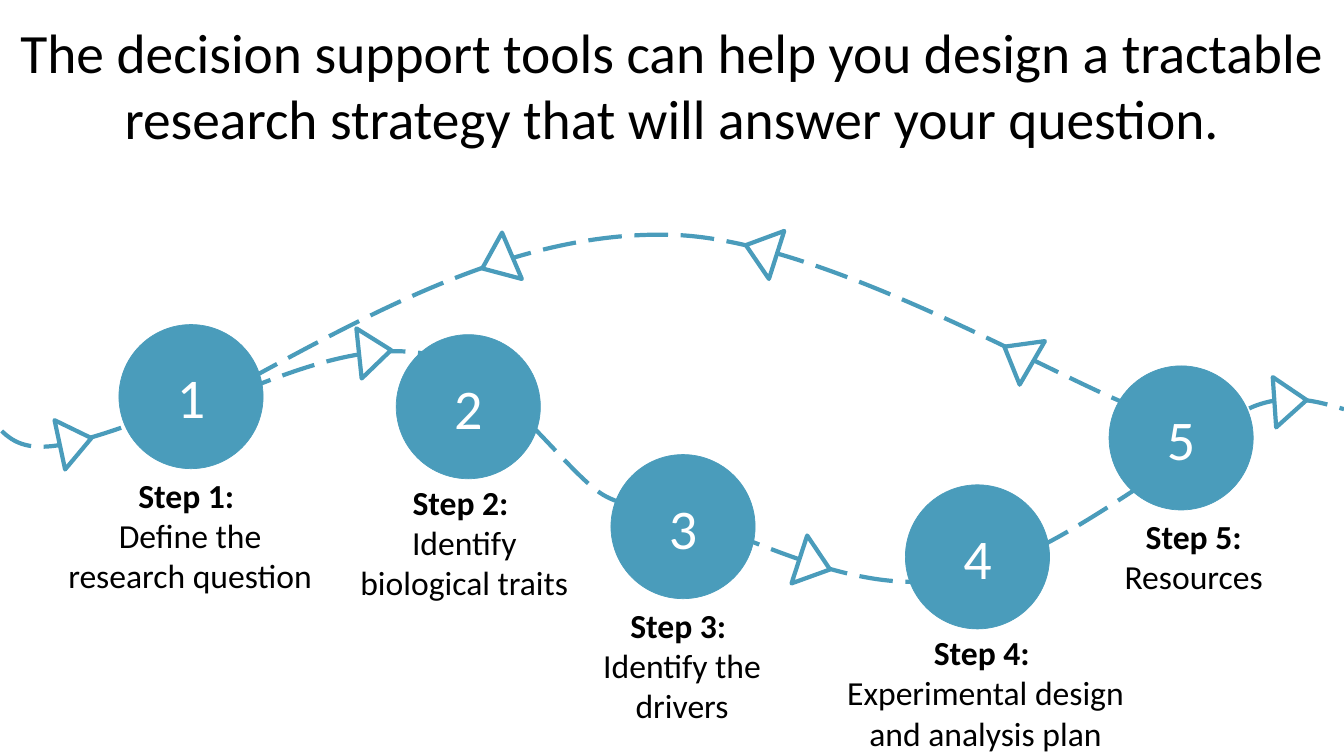
"""Build the five-step decision support journey slide."""
from dataclasses import dataclass

from lxml import etree
from pptx import Presentation
from pptx.dml.color import RGBColor
from pptx.enum.dml import MSO_LINE
from pptx.enum.shapes import MSO_SHAPE
from pptx.enum.text import MSO_ANCHOR, MSO_AUTO_SIZE, PP_ALIGN
from pptx.oxml.ns import qn
from pptx.util import Inches, Pt

ELLIPSE, TRIANGLE = MSO_SHAPE.OVAL, MSO_SHAPE.ISOSCELES_TRIANGLE
LONG_DASH = MSO_LINE.LONG_DASH
CENTER = PP_ALIGN.CENTER
TOP, MIDDLE = MSO_ANCHOR.TOP, MSO_ANCHOR.MIDDLE
GROW, FIXED = MSO_AUTO_SIZE.SHAPE_TO_FIT_TEXT, MSO_AUTO_SIZE.NONE

TEAL, BLACK, WHITE = "4A9CBB", "000000", "FFFFFF"
CIRCLE_SIZE = 1.43
ARROW_WIDTH, ARROW_HEIGHT = 0.5, 0.32
TITLE = ("The decision support tools can help you design a tractable "
         "research strategy that will answer your question.")


@dataclass(frozen=True)
class Step:
    number: int
    circle: tuple[float, float]
    label_box: tuple[float, float, float, float]
    lines: tuple[str, ...]
    heading_inline: bool = False


@dataclass(frozen=True)
class Arrow:
    left: float
    top: float
    rotation: float


STEPS = [
    Step(1, (1.18, 3.22), (0.51, 4.66, 2.75, 1.31), ("Define the research question",)),
    Step(2, (3.93, 3.32), (3.28, 4.73, 2.65, 1.31), ("Identify", "biological traits")),
    Step(3, (6.06, 4.51), (5.46, 5.95, 2.61, 1.31), ("Identify the drivers",)),
    Step(4, (8.98, 4.81), (8.16, 6.22, 3.23, 1.31),
         ("Experimental design", "and analysis plan")),
    Step(5, (11, 3.63), (10.91, 5.07, 1.86, 0.91), ("Resources",), True),
]

ARROWS = [
    Arrow(3.47, 3.33, 84), Arrow(0.5, 4.22, 77.9), Arrow(7.83, 5.44, 108.1),
    Arrow(12.55, 3.82, 86.1), Arrow(4.68, 2.44, 246.9), Arrow(7.3, 2.32, 287.7),
    Arrow(9.85, 3.36, 300.1),
]

ROUTES = [
    [(11.42, 4.03), (11.77, 4.19), (12.11, 4.35), (11.31, 4.06),
     (10.52, 3.78), (8.15, 2.36), (6.65, 2.33),
     (5.14, 2.29), (3.72, 3.08), (2.29, 3.86)],
    [(1.95, 4.07), (2.77, 3.72), (3.59, 3.37), (4.27, 3.52),
     (4.95, 3.66), (5.65, 4.75), (6.02, 4.93),
     (6.4, 5.12), (6.46, 4.87), (6.52, 4.63)],
    [(7.22, 5.28), (7.92, 5.56), (8.62, 5.84), (9.31, 5.76),
     (9.99, 5.68), (10.66, 5.25), (11.33, 4.81)],
    [(11.31, 4.9), (11.71, 4.53), (12.11, 4.17), (12.44, 4.03),
     (12.78, 3.9), (13.06, 3.98), (13.33, 4.06)],
    [(2.06, 3.92), (1.48, 4.15), (0.9, 4.37), (0.56, 4.42),
     (0.21, 4.47), (0.09, 4.35), (-0.03, 4.23)],
]


def color(value: str) -> RGBColor:
    """Turn a hex string into a colour."""
    return RGBColor.from_string(value)


def apply(target, values: dict) -> None:
    """Set each named format value on the target."""
    for name, value in values.items():
        setattr(target, name, value)


def add_run(paragraph, text: str, size: float, ink: str, bold: bool = False) -> None:
    """Append a centred run of formatted text to the paragraph."""
    paragraph.alignment = CENTER
    run = paragraph.add_run()
    run.text = text
    apply(run.font, {"name": "Calibri", "size": Pt(size), "bold": bold})
    run.font.color.rgb = color(ink)


def add_text_frame(slide, box: tuple[float, float, float, float], anchor, sizing):
    """Add a wrapping text box and return its frame."""
    frame = slide.shapes.add_textbox(*map(Inches, box)).text_frame
    apply(frame, {"word_wrap": True, "vertical_anchor": anchor, "auto_size": sizing})
    return frame


def style_line(shape, width: float) -> None:
    """Give the shape a teal outline and no shadow."""
    shape.shadow.inherit = False
    shape.line.color.rgb = color(TEAL)
    shape.line.width = Pt(width)


def add_route(slide, points: list[tuple[float, float]]) -> None:
    """Draw a dashed Bézier route: a start point, then triples of curve points."""
    start, *rest = [(Inches(x), Inches(y)) for x, y in points]
    builder = slide.shapes.build_freeform(*start)
    builder.add_line_segments(rest, close=False)
    route = builder.convert_to_shape()
    route.fill.background()
    style_line(route, 3)
    route.line.dash_style = LONG_DASH
    outline = next(route.element.iter(qn("a:path")))
    segments = outline.findall(qn("a:lnTo"))
    for first in range(0, len(segments), 3):
        curve = etree.SubElement(outline, qn("a:cubicBezTo"))
        for segment in segments[first:first + 3]:
            curve.append(segment[0])
            outline.remove(segment)


def add_arrow(slide, arrow: Arrow) -> None:
    """Draw a hollow direction marker."""
    box = (arrow.left, arrow.top, ARROW_WIDTH, ARROW_HEIGHT)
    marker = slide.shapes.add_shape(TRIANGLE, *map(Inches, box))
    marker.rotation = arrow.rotation
    marker.fill.solid()
    marker.fill.fore_color.rgb = color(WHITE)
    style_line(marker, 3)


def add_label(slide, step: Step) -> None:
    """Write the step heading and its description."""
    frame = add_text_frame(slide, step.label_box, TOP, GROW)
    heading = frame.paragraphs[0]
    add_run(heading, f"Step {step.number}: ", 24, BLACK, bold=True)
    for line in step.lines:
        paragraph = heading if step.heading_inline else frame.add_paragraph()
        add_run(paragraph, line, 24, BLACK)


def add_circle(slide, step: Step) -> None:
    """Draw the numbered circle of a step."""
    box = (*step.circle, CIRCLE_SIZE, CIRCLE_SIZE)
    circle = slide.shapes.add_shape(ELLIPSE, *map(Inches, box))
    circle.fill.solid()
    circle.fill.fore_color.rgb = color(TEAL)
    style_line(circle, 0.5)
    circle.text_frame.vertical_anchor = MIDDLE
    add_run(circle.text_frame.paragraphs[0], str(step.number), 40, WHITE)


def main() -> None:
    """Assemble and save the slide."""
    deck = Presentation()
    apply(deck, {"slide_width": Inches(13.33), "slide_height": Inches(7.5)})
    slide = deck.slides.add_slide(deck.slide_layouts[6])
    title = add_text_frame(slide, (0, 0.15, 13.33, 1.37), MIDDLE, FIXED)
    add_run(title.paragraphs[0], TITLE, 39.6, BLACK)
    for route in ROUTES:
        add_route(slide, route)
    for arrow in ARROWS:
        add_arrow(slide, arrow)
    for step in STEPS:
        add_circle(slide, step)
        add_label(slide, step)
    deck.save("out.pptx")


if __name__ == "__main__":
    main()
